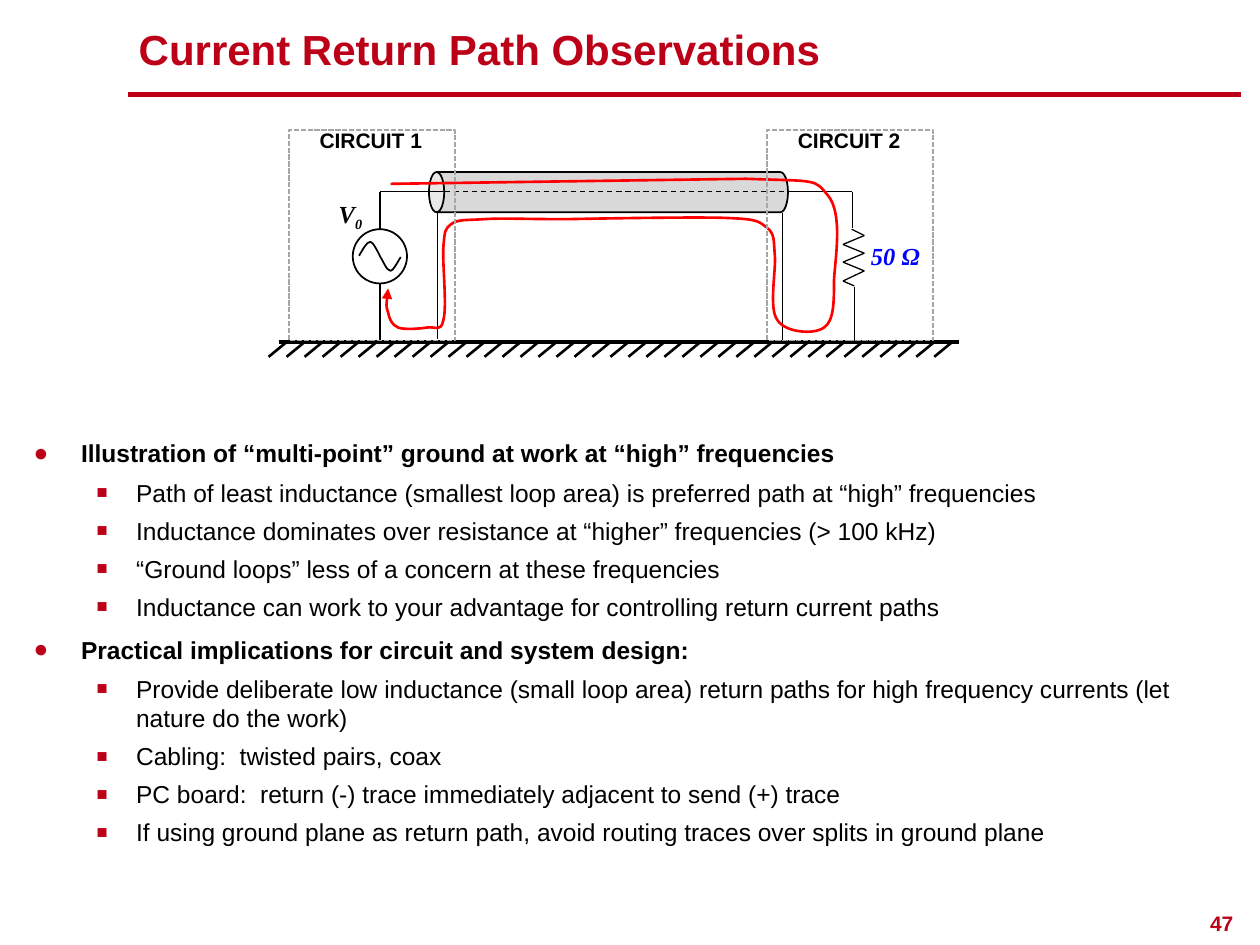
from dataclasses import dataclass
from itertools import pairwise
from typing import Optional

from lxml import etree
from pptx import Presentation
from pptx import util as u
from pptx.dml.color import RGBColor
from pptx.enum import dml, shapes, text
from pptx.oxml.ns import qn

Pt = u.Pt
Point = tuple[float, float]


@dataclass(frozen=True)
class Theme:
    accent: str = "BB0018"
    ink: str = "000000"
    paper: str = "FFFFFF"
    shield: str = "D9D9D9"
    frame: str = "A6A6A6"
    current: str = "FF0000"
    load: str = "0000FF"
    sans: str = "Arial"
    serif: str = "Times New Roman"
    title: float = 24
    body: float = 14
    small: float = 12


THEME = Theme()


@dataclass(frozen=True)
class Label:
    words: str
    left: float
    top: float
    width: float
    height: float
    size: float
    color: str = THEME.ink
    font: str = THEME.sans
    italic: bool = False
    subscript: str = ""
    wrap: bool = False
    align: text.PP_ALIGN = text.PP_ALIGN.LEFT
    anchor: text.MSO_ANCHOR = text.MSO_ANCHOR.TOP
    spacing: float = 1.0


@dataclass(frozen=True)
class Wire:
    start: Point
    end: Point
    width: float = 0.75
    color: str = THEME.ink
    dash: Optional[dml.MSO_LINE] = None


@dataclass(frozen=True)
class BulletStyle:
    symbol: str
    margin: float
    indent: float
    percent: int
    bold: bool
    before: float
    after: float


BULLETS = (
    BulletStyle("●", 27, -27, 100, True, 2.8, 5.6),
    BulletStyle("■", 58.5, -22.5, 75, False, 0, 4.9),
)

TOPICS = {
    "Illustration of “multi-point” ground at work at “high” frequencies": (
        "Path of least inductance (smallest loop area) is preferred path at “high” frequencies",
        "Inductance dominates over resistance at “higher” frequencies (> 100 kHz)",
        "“Ground loops” less of a concern at these frequencies",
        "Inductance can work to your advantage for controlling return current paths",
    ),
    "Practical implications for circuit and system design:": (
        "Provide deliberate low inductance (small loop area) return paths for high "
        "frequency currents (let nature do the work)",
        "Cabling:  twisted pairs, coax",
        "PC board:  return (-) trace immediately adjacent to send (+) trace",
        "If using ground plane as return path, avoid routing traces over splits in ground plane",
    ),
}

GROUND = 195.3
CORE = 109.5
RESISTOR = ((486.7, 131), (493.9, 134.6), (481.7, 139.7), (493.9, 144.7), (481.7, 149.8),
            (493.9, 154.8), (481.7, 160.6), (488.2, 163.4))
SOURCE_LEADS = (
    Wire((254.2, CORE), (217.2, CORE)),
    Wire((217.2, CORE), (217.2, GROUND)),
)
LOAD_LEADS = (
    Wire((250, 121), (250, 193.7)),
    Wire((487.2, CORE), (487.2, 130.3)),
    Wire((488.2, 164.2), (488.2, GROUND)),
    Wire((450.7, CORE), (486.7, CORE)),
    Wire((254.2, CORE), (450.7, CORE), dash=dml.MSO_LINE.DASH),
    Wire((447.3, 121.7), (447.3, GROUND)),
)
# Cubic curves: a start point, then two control points and an end point per curve.
SINE = ((205.2, 146.2),
        (207.4, 142.6), (209.5, 138.2), (211.7, 138.2),
        (213.1, 138.2), (216, 144), (217.4, 146.9),
        (218.9, 149), (221, 154.8), (223.2, 154.8),
        (224.6, 154.8), (226.8, 150.5), (229, 146.9))
# The return loop opens with one straight run.
CURRENT = ((223.2, 105.1), (426.2, 102.2),
           (468, 103.7), (465.1, 102.2), (473, 111.6),
           (481.7, 121.7), (477.4, 146.9), (476.6, 159.8),
           (476.6, 172.1), (476.6, 183.6), (470.9, 187.2),
           (465.1, 191.5), (448.6, 190.1), (444.2, 182.9),
           (439.2, 176.4), (443.5, 154.8), (442.8, 146.2),
           (442.1, 137.5), (442.8, 133.9), (438.5, 130.3),
           (433.4, 126.7), (434.2, 125.3), (415.4, 124.6),
           (396, 123.8), (324, 125.3), (324, 125.3),
           (299.5, 125.3), (287.3, 124.6), (276.5, 125.3),
           (265.7, 126), (261.4, 125.3), (257.8, 128.2),
           (254.2, 131), (254.2, 131.8), (253.4, 141.1),
           (252.7, 150.5), (255.6, 175), (253.4, 182.9),
           (252, 190.1), (249.1, 186.5), (244.1, 187.2),
           (239.8, 187.9), (231.1, 188.6), (227.5, 187.2),
           (223.9, 185.8), (222.5, 182.2), (221.8, 178.6),
           (220.3, 175), (221.8, 164.9), (221.8, 164.9))


def rgb(color: str) -> RGBColor:
    return RGBColor.from_string(color)


def set_font(font, size: float, color: str = THEME.ink, **values) -> None:
    for name, value in {"name": THEME.sans, "size": Pt(size), **values}.items():
        setattr(font, name, value)
    font.color.rgb = rgb(color)


def set_line(line, color: str, width: float, dash: Optional[dml.MSO_LINE] = None) -> None:
    line.color.rgb = rgb(color)
    line.width = Pt(width)
    if dash is not None:
        line.dash_style = dash


def set_fill(shape, color: Optional[str]) -> None:
    shape.shadow.inherit = False
    if color is None:
        shape.fill.background()
    else:
        shape.fill.solid()
        shape.fill.fore_color.rgb = rgb(color)


def draw_label(page, label: Label) -> None:
    box = page.shapes.add_textbox(*map(Pt, (label.left, label.top, label.width, label.height)))
    box.text_frame.word_wrap = label.wrap
    box.text_frame.vertical_anchor = label.anchor
    para = box.text_frame.paragraphs[0]
    para.alignment, para.line_spacing = label.align, label.spacing
    for words in filter(None, (label.words, label.subscript)):
        span = para.add_run()
        span.text = words
        set_font(span.font, label.size, label.color, name=label.font, bold=True, italic=label.italic)
    if label.subscript:
        span.font._element.set("baseline", "-25000")


def draw_wires(page, wires) -> None:
    for wire in wires:
        line = page.shapes.add_connector(shapes.MSO_CONNECTOR.STRAIGHT,
                                         *map(Pt, (*wire.start, *wire.end)))
        set_line(line.line, wire.color, wire.width, wire.dash)
        etree.SubElement(line._element.spPr, qn("a:effectLst"))


def draw_shape(page, kind, frame: tuple, fill: Optional[str], color: str = THEME.ink, dash=None):
    shape = page.shapes.add_shape(kind, *map(Pt, frame))
    set_fill(shape, fill)
    set_line(shape.line, color, 1, dash)
    return shape


def draw_curve(page, points: tuple[Point, ...], color: str, width: float, straight: int = 0):
    """Draw an open outline: some straight runs, then one cubic curve per three points."""
    builder = page.shapes.build_freeform(*map(Pt, points[0]))
    builder.add_line_segments([tuple(map(Pt, point)) for point in points[1:]], close=False)
    curve = builder.convert_to_shape()
    runs = list(curve._element.iter(qn("a:lnTo")))[straight:]
    for i in range(0, len(runs), 3):
        cubic = etree.Element(qn("a:cubicBezTo"))
        runs[i].addprevious(cubic)
        for run in runs[i:i + 3]:
            cubic.append(run[0])
            run.getparent().remove(run)
    set_fill(curve, None)
    set_line(curve.line, color, width)
    return curve


def draw_bullet(para, words: str, level: int, first: bool) -> None:
    style = BULLETS[level]
    props = para._p.get_or_add_pPr()
    props.set("marL", str(Pt(style.margin)))
    props.set("indent", str(Pt(style.indent)))
    tint = etree.SubElement(props, qn("a:buClr"))
    etree.SubElement(tint, qn("a:srgbClr"), val=THEME.accent)
    etree.SubElement(props, qn("a:buSzPct"), val=str(style.percent * 1000))
    etree.SubElement(props, qn("a:buFont"), typeface=THEME.sans)
    etree.SubElement(props, qn("a:buChar"), char=style.symbol)
    values = {"level": level, "space_after": Pt(style.after),
              "space_before": Pt(0 if first else style.before)}
    for name, value in values.items():
        setattr(para, name, value)
    span = para.add_run()
    span.text = words
    set_font(span.font, THEME.body, bold=style.bold)


def draw_topics(page) -> None:
    box = page.shapes.add_textbox(*map(Pt, (12.2, 247, 692.6, 248.4)))
    box.text_frame.word_wrap = True
    rows = [(words, level) for topic, points in TOPICS.items()
            for words, level in ((topic, 0), *((point, 1) for point in points))]
    for i, (words, level) in enumerate(rows):
        para = box.text_frame.add_paragraph() if i else box.text_frame.paragraphs[0]
        draw_bullet(para, words, level, i == 0)


def draw_circuit(page) -> None:
    coax = draw_shape(page, shapes.MSO_SHAPE.CAN, (336.2, 7.2, 23, 205.2), THEME.shield)
    coax.rotation, coax.adjustments[0] = 270, 0.38
    draw_wires(page.shapes.add_group_shape(), (Wire(*ends) for ends in pairwise(RESISTOR)))
    draw_wires(page, SOURCE_LEADS)
    source = page.shapes.add_group_shape()
    draw_shape(source, shapes.MSO_SHAPE.OVAL, (201.6, 131, 31, 31), THEME.paper)
    draw_curve(source, SINE, THEME.ink, 1)
    draw_wires(page, LOAD_LEADS)
    serif = {"size": THEME.body, "font": THEME.serif, "italic": True}
    draw_label(page, Label("50 Ω", 490.6, 134.3, 42.5, 24.5, color=THEME.load, **serif))
    draw_label(page, Label("V", 186.5, 110.2, 28.8, 24.5, subscript="0", **serif))
    loop = draw_curve(page, CURRENT, THEME.current, 1.5, straight=1)
    etree.SubElement(loop.line._get_or_add_ln(), qn("a:tailEnd"), type="triangle")


def draw_ground(page) -> None:
    ground = page.shapes.add_group_shape()
    starts = (164 + 10.28 * i for i in range(38))
    draw_wires(ground, (Wire((159.3, GROUND), (547.9, GROUND), 2.25),
                        *(Wire((x, GROUND), (x - 10.5, GROUND + 8.6), 1.5) for x in starts)))


def main() -> None:
    deck = Presentation()
    deck.slide_width, deck.slide_height = Pt(720), Pt(540)
    page = deck.slides.add_slide(deck.slide_layouts[6])
    draw_label(page, Label("47", 682.4, 518.4, 29.5, 20.2, THEME.small, THEME.accent,
                           align=text.PP_ALIGN.RIGHT, spacing=0.9))
    draw_wires(page, [Wire((72.9, 54), (709.2, 54), 3, THEME.accent)])
    draw_label(page, Label("Current Return Path Observations", 72.2, 12.2, 571, 31.7, THEME.title,
                           THEME.accent, wrap=True, anchor=text.MSO_ANCHOR.MIDDLE))
    draw_circuit(page)
    draw_topics(page)
    draw_ground(page)
    for name, left in (("CIRCUIT 1", 165), ("CIRCUIT 2", 438.3)):
        draw_shape(page, shapes.MSO_SHAPE.RECTANGLE, (left, 74.2, 95, 120.4), None,
                   THEME.frame, dml.MSO_LINE.SQUARE_DOT)
        draw_label(page, Label(name, left + 10.5, 69.1, 73.4, 21.6, THEME.small))
    deck.save("out.pptx")


if __name__ == "__main__":
    main()
